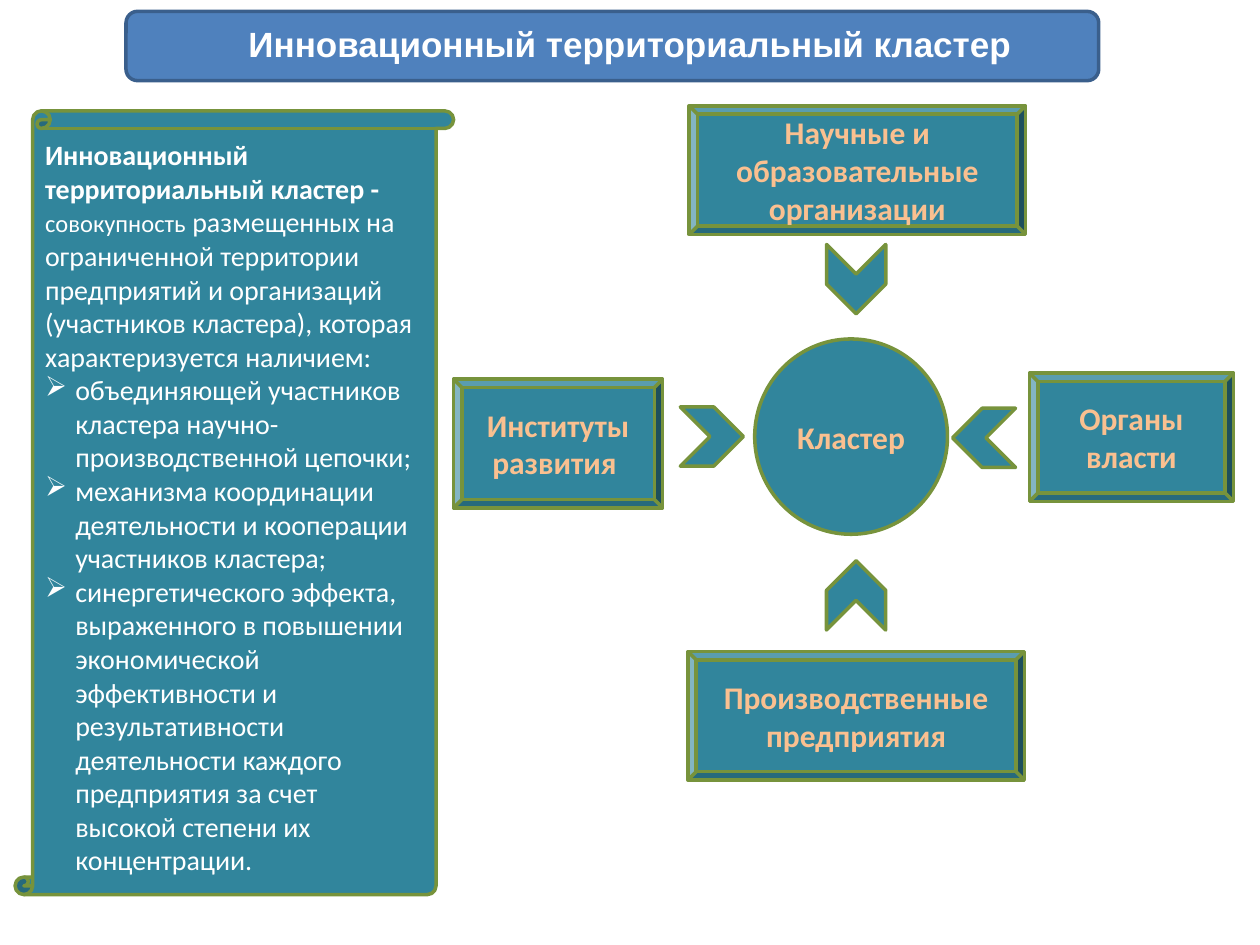
from dataclasses import dataclass

from lxml import etree
from pptx import Presentation
from pptx import util as u
from pptx.dml.color import RGBColor
from pptx.enum import shapes, text
from pptx.oxml import ns

Kind = shapes.MSO_SHAPE
Align = text.PP_ALIGN


@dataclass(frozen=True)
class Theme:
    teal: str = "31859C"
    green: str = "77933C"
    peach: str = "FAC090"
    white: str = "FFFFFF"
    blue: str = "4F81BD"
    navy: str = "3A5F8C"
    head: int = 20
    label: int = 18
    body: int = 16
    small: int = 14
    line: int = 2
    sans: str = "Calibri"
    title: str = "Arial"


@dataclass(frozen=True)
class Box:
    x: float
    y: float
    w: float
    h: float


@dataclass(frozen=True)
class Node:
    kind: Kind
    box: Box
    label: str


@dataclass(frozen=True)
class Arrow:
    box: Box
    turn: int


@dataclass(frozen=True)
class Run:
    words: str
    size: int
    bold: bool = False


THEME = Theme()

NODES = [
    Node(Kind.BEVEL, Box(5.47, 0.84, 2.67, 1.02), "Научные и образовательные организации"),
    Node(Kind.BEVEL, Box(3.6, 3.01, 1.66, 1.02), "Институты развития "),
    Node(Kind.BEVEL, Box(5.46, 5.17, 2.67, 1.02), "Производственные предприятия"),
    Node(Kind.BEVEL, Box(8.17, 2.96, 1.62, 1.02), "Органы власти"),
    Node(Kind.FLOWCHART_CONNECTOR, Box(5.99, 2.69, 1.53, 1.55), "Кластер"),
]

ARROWS = [
    Arrow(Box(6.52, 1.98, 0.55, 0.47), 90),
    Arrow(Box(6.52, 4.49, 0.55, 0.47), 270),
    Arrow(Box(5.4, 3.23, 0.5, 0.47), 0),
    Arrow(Box(7.56, 3.24, 0.5, 0.47), 180),
]

INTRO = [
    [Run("Инновационный территориальный кластер -", THEME.body, True)],
    [
        Run("совокупность", THEME.small),
        Run(" размещенных на ограниченной территории предприятий и организаций "
            "(участников кластера), которая характеризуется наличием:", THEME.body),
    ],
]

TRAITS = [
    "объединяющей участников кластера научно-производственной цепочки;",
    "механизма координации деятельности и кооперации участников кластера;",
    "синергетического эффекта, выраженного в повышении экономической "
    "эффективности и результативности деятельности каждого предприятия "
    "за счет высокой степени их концентрации.",
]


def place(box: Box) -> list[u.Length]:
    return [u.Inches(side) for side in (box.x, box.y, box.w, box.h)]


def draw(slide, kind: Kind, box: Box, fill: str = THEME.teal, edge: str = THEME.green):
    shape = slide.shapes.add_shape(kind, *place(box))
    shape.shadow.inherit = False
    shape.fill.solid()
    shape.fill.fore_color.rgb = RGBColor.from_string(fill)
    shape.line.color.rgb = RGBColor.from_string(edge)
    shape.line.width = u.Pt(THEME.line)
    return shape


def write(para, run: Run, color: str, face: str = THEME.sans) -> None:
    part = para.add_run()
    part.text = run.words
    part.font.name = face
    part.font.size = u.Pt(run.size)
    part.font.bold = run.bold
    part.font.color.rgb = RGBColor.from_string(color)


def mark(para) -> None:
    props = para._p.get_or_add_pPr()
    hang = u.Inches(0.24)
    props.set("marL", str(hang))
    props.set("indent", str(-hang))
    etree.SubElement(props, ns.qn("a:buChar")).set("char", "➢")


def draw_title(slide) -> None:
    draw(slide, Kind.ROUNDED_RECTANGLE, Box(1, 0.09, 7.72, 0.55), THEME.blue, THEME.navy)
    frame = slide.shapes.add_textbox(*place(Box(1.14, 0.13, 7.72, 0.44))).text_frame
    frame.word_wrap = True
    para = frame.paragraphs[0]
    para.alignment = Align.CENTER
    run = Run("Инновационный территориальный кластер", THEME.head, True)
    write(para, run, THEME.white, THEME.title)


def draw_node(slide, node: Node) -> None:
    shape = draw(slide, node.kind, node.box)
    if node.kind == Kind.BEVEL:
        shape.adjustments[0] = 0.065
    frame = shape.text_frame
    frame.word_wrap = True
    frame.vertical_anchor = text.MSO_ANCHOR.MIDDLE
    para = frame.paragraphs[0]
    para.alignment = Align.CENTER
    write(para, Run(node.label, THEME.label, True), THEME.peach)


def draw_arrow(slide, arrow: Arrow) -> None:
    draw(slide, Kind.CHEVRON, arrow.box).rotation = arrow.turn


def draw_scroll(slide) -> None:
    shape = draw(slide, Kind.VERTICAL_SCROLL, Box(0.12, 0.88, 3.48, 6.22))
    shape.adjustments[0] = 0.04
    frame = shape.text_frame
    frame.word_wrap = True
    frame.vertical_anchor = text.MSO_ANCHOR.MIDDLE
    rows = INTRO + [[Run(trait, THEME.body)] for trait in TRAITS]
    for i, runs in enumerate(rows):
        para = frame.add_paragraph() if i else frame.paragraphs[0]
        para.alignment = Align.LEFT
        if i >= len(INTRO):
            mark(para)
        for run in runs:
            write(para, run, THEME.white)


def main() -> None:
    deck = Presentation()
    deck.slide_width, deck.slide_height = u.Inches(10), u.Inches(7.5)
    slide = deck.slides.add_slide(deck.slide_layouts[6])
    draw_title(slide)
    for node in NODES:
        draw_node(slide, node)
    for arrow in ARROWS:
        draw_arrow(slide, arrow)
    draw_scroll(slide)
    deck.save("out.pptx")


if __name__ == "__main__":
    main()
